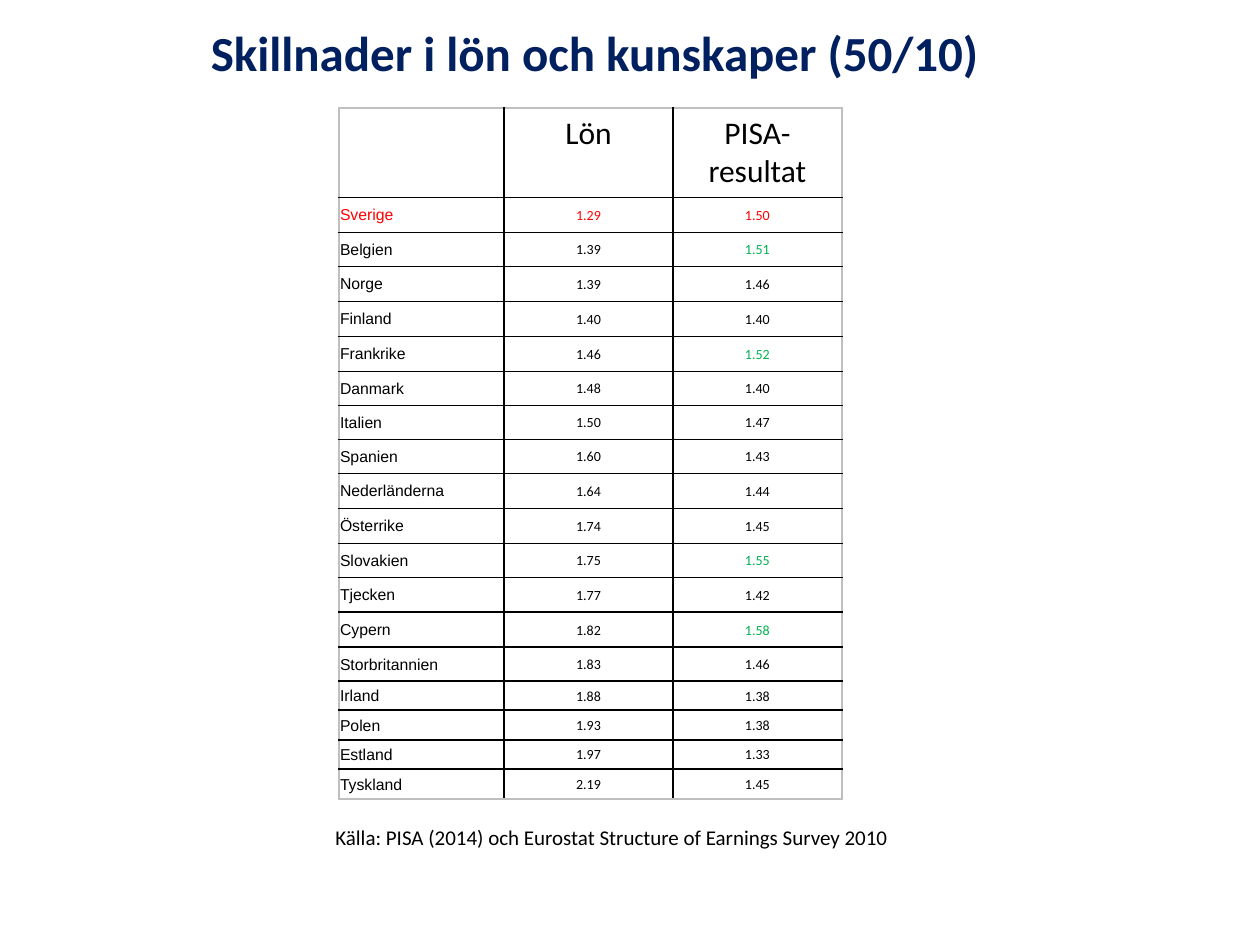
from itertools import pairwise

from lxml.etree import SubElement
from pptx import Presentation
from pptx.dml.color import RGBColor
from pptx.enum.text import MSO_ANCHOR as Anchor, PP_ALIGN as Align
from pptx.oxml.ns import qn
from pptx.util import Pt

PX = 914400 // 126
COLORS = {"text": "000000", "title": "002060", "sweden": "FF0000",
          "above": "00B050", "outer": "BFBFBF"}
HEADERS = ["", "Lön", "PISA-resultat"]
COUNTRIES = [
    ("Sverige", 1.29, 1.50), ("Belgien", 1.39, 1.51), ("Norge", 1.39, 1.46),
    ("Finland", 1.40, 1.40), ("Frankrike", 1.46, 1.52), ("Danmark", 1.48, 1.40),
    ("Italien", 1.50, 1.47), ("Spanien", 1.60, 1.43), ("Nederländerna", 1.64, 1.44),
    ("Österrike", 1.74, 1.45), ("Slovakien", 1.75, 1.55), ("Tjecken", 1.77, 1.42),
    ("Cypern", 1.82, 1.58), ("Storbritannien", 1.83, 1.46), ("Irland", 1.88, 1.38),
    ("Polen", 1.93, 1.38), ("Estland", 1.97, 1.33), ("Tyskland", 2.19, 1.45),
]
SWEDEN_SCORE = COUNTRIES[0][2]
COLUMN_EDGES = [339, 504, 673, 842]
ROW_EDGES = [108, 196, 231, 265, 300, 335, 370, 404, 438, 472,
             507, 542, 576, 611, 646, 680, 709, 739, 768, 798]


def write(frame, text, size, color="text", font="Calibri", bold=False, align=Align.LEFT):
    paragraph = frame.paragraphs[0]
    paragraph.alignment = align
    run = paragraph.add_run()
    run.text = text
    run.font.size = Pt(size)
    run.font.name = font
    run.font.bold = bold
    run.font.color.rgb = RGBColor.from_string(COLORS[color])


def add_borders(cell, outer_sides):
    properties = cell._tc.get_or_add_tcPr()
    for index, side in enumerate(["lnL", "lnR", "lnT", "lnB"]):
        line = properties.makeelement(qn(f"a:{side}"), {"w": str(Pt(1))})
        properties.insert(index, line)
        fill = SubElement(line, qn("a:solidFill"))
        color = "outer" if side in outer_sides else "text"
        SubElement(fill, qn("a:srgbClr"), val=COLORS[color])


presentation = Presentation()
presentation.slide_width = 1260 * PX
presentation.slide_height = 945 * PX
slide = presentation.slides.add_slide(presentation.slide_layouts[5])

# Title
title = slide.shapes.title
title.left, title.top, title.width, title.height = 178 * PX, 16 * PX, 833 * PX, 72 * PX
title.text_frame.vertical_anchor = Anchor.TOP
write(title.text_frame, "Skillnader i lön och kunskaper (50/10)", 28, "title",
      bold=True, align=Align.CENTER)

# Table grid
left, top = COLUMN_EDGES[0], ROW_EDGES[0]
table = slide.shapes.add_table(
    len(COUNTRIES) + 1, len(HEADERS), left * PX, top * PX,
    (COLUMN_EDGES[-1] - left) * PX, (ROW_EDGES[-1] - top) * PX).table
table.first_row = table.horz_banding = False
for column, (start, end) in zip(table.columns, pairwise(COLUMN_EDGES)):
    column.width = (end - start) * PX
for row, (start, end) in zip(table.rows, pairwise(ROW_EDGES)):
    row.height = (end - start) * PX

# Fills and borders, lighter around the outside
last_row, last_column = len(COUNTRIES), len(HEADERS) - 1
for row_index, row in enumerate(table.rows):
    for column_index, cell in enumerate(row.cells):
        cell.fill.background()
        edges = {"lnL": column_index == 0, "lnR": column_index == last_column,
                 "lnT": row_index == 0, "lnB": row_index == last_row}
        add_borders(cell, [side for side, is_outer in edges.items() if is_outer])

# Header row
for column_index, header in enumerate(HEADERS):
    if header:
        write(table.cell(0, column_index).text_frame, header, 18, align=Align.CENTER)

# Country rows: Sweden in red, scores above Sweden's in green
for row_index, (country, wage, score) in enumerate(COUNTRIES, start=1):
    base = "sweden" if country == "Sverige" else "text"
    score_color = "above" if score > SWEDEN_SCORE else base
    cells = list(table.rows[row_index].cells)
    for cell in cells:
        cell.margin_left = cell.margin_right = cell.margin_top = PX
        cell.margin_bottom = 0
        cell.vertical_anchor = Anchor.MIDDLE
    write(cells[0].text_frame, country, 9, base, font="Arial")
    write(cells[1].text_frame, f"{wage:.2f}", 8, base, align=Align.CENTER)
    write(cells[2].text_frame, f"{score:.2f}", 8, score_color, align=Align.CENTER)

# Source
source = slide.shapes.add_textbox(323 * PX, 818 * PX, 833 * PX, 38 * PX)
source.text_frame.word_wrap = True
write(source.text_frame,
      "Källa: PISA (2014) och Eurostat Structure of Earnings Survey 2010", 12)

presentation.save("out.pptx")
